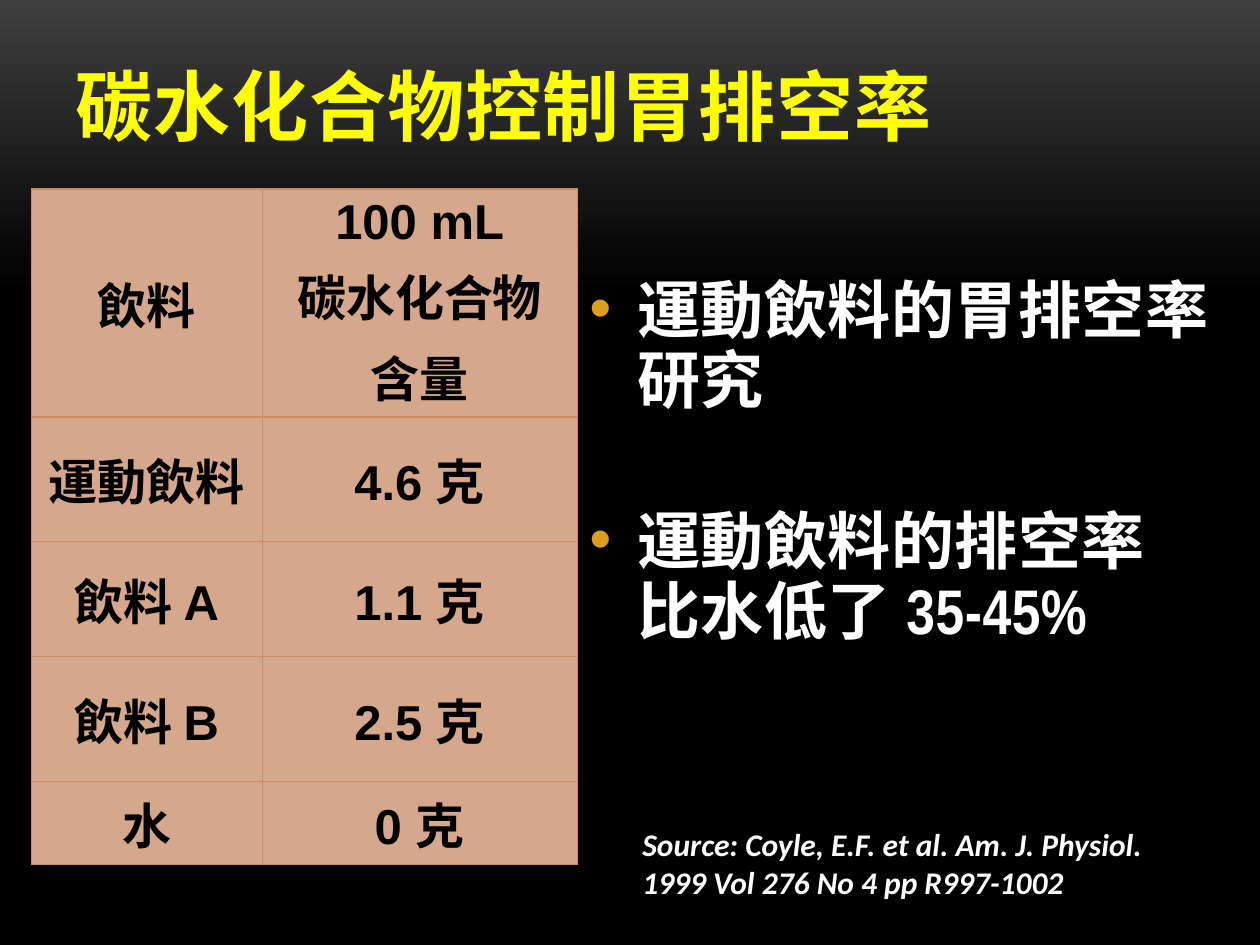
from lxml.etree import SubElement
from pptx import Presentation
from pptx.dml.color import RGBColor
from pptx.enum.text import MSO_ANCHOR, MSO_AUTO_SIZE, PP_ALIGN
from pptx.oxml.ns import qn
from pptx.util import Inches, Pt

YELLOW, WHITE, BLACK = "FFFF00", "FFFFFF", "000000"
BULLET, CELL_FILL, CELL_BORDER = "DC9E1F", "D5A78C", "CC8E60"

DRINKS = [
    ("飲料", "100 mL\n碳水化合物\n含量"),
    ("運動飲料", "4.6 克"),
    ("飲料 A", "1.1 克"),
    ("飲料 B", "2.5 克"),
    ("水", "0 克"),
]
COLUMN_WIDTHS = [1.83, 2.5]
ROW_HEIGHTS = [1.81, 0.99, 0.91, 0.99, 0.66]


def color(value):
    return RGBColor.from_string(value)


def write_text(paragraph, text, size, font="Arial Narrow", fill=WHITE,
               italic=False, spacing=0, align=PP_ALIGN.LEFT):
    """Fill a paragraph with bold text; a vertical tab makes a line break."""
    paragraph.text = text
    paragraph.alignment = align
    for run in paragraph.runs:
        run.font.name = font
        run.font.size = Pt(size)
        run.font.bold = True
        run.font.italic = italic
        run.font.color.rgb = color(fill)
        if spacing:
            run.font._element.set("spc", str(round(spacing * 100)))


def add_text_frame(slide, left, top, width, height):
    box = slide.shapes.add_textbox(Inches(left), Inches(top), Inches(width), Inches(height))
    box.text_frame.word_wrap = True
    return box.text_frame


def paint_background(slide):
    fill = slide.background.fill
    fill.gradient()
    fill.gradient_angle = 270
    for stop, position, value in zip(fill.gradient_stops, (0, 0.31), ("3F3F3F", BLACK)):
        stop.position = position
        stop.color.rgb = color(value)


def place_title(slide, left, top, width, height):
    title = slide.shapes.title
    title.left, title.top = Inches(left), Inches(top)
    title.width, title.height = Inches(width), Inches(height)
    frame = title.text_frame
    frame.auto_size = MSO_AUTO_SIZE.NONE
    frame.vertical_anchor = MSO_ANCHOR.BOTTOM
    write_text(frame.paragraphs[0], "碳水化合物控制胃排空率", 44, fill=YELLOW, spacing=0.5)


def add_borders(cell):
    properties = cell._tc.get_or_add_tcPr()
    for index, side in enumerate(("lnL", "lnR", "lnT", "lnB")):
        line = properties.makeelement(qn(f"a:{side}"), w=str(Pt(0.75)))
        solid = SubElement(line, qn("a:solidFill"))
        SubElement(solid, qn("a:srgbClr"), val=CELL_BORDER)
        properties.insert(index, line)


def fill_cell(cell, text):
    cell.fill.solid()
    cell.fill.fore_color.rgb = color(CELL_FILL)
    cell.vertical_anchor = MSO_ANCHOR.MIDDLE
    add_borders(cell)
    frame = cell.text_frame
    for index, line in enumerate(text.split("\n")):
        paragraph = frame.add_paragraph() if index else frame.paragraphs[0]
        write_text(paragraph, line, 28, font="Arial", fill=BLACK, align=PP_ALIGN.CENTER)
        if index:
            paragraph.space_before = Pt(5.6)


def add_drinks_table(slide, left, top):
    table = slide.shapes.add_table(
        len(DRINKS), len(COLUMN_WIDTHS), Inches(left), Inches(top),
        Inches(sum(COLUMN_WIDTHS)), Inches(sum(ROW_HEIGHTS))).table
    for column, width in zip(table.columns, COLUMN_WIDTHS):
        column.width = Inches(width)
    for row, height, texts in zip(table.rows, ROW_HEIGHTS, DRINKS):
        row.height = Inches(height)
        for cell, text in zip(row.cells, texts):
            fill_cell(cell, text)


def add_bullet(paragraph):
    properties = paragraph._p.get_or_add_pPr()
    properties.set("marL", str(Inches(0.38)))
    properties.set("indent", str(-Inches(0.38)))
    bullet_color = SubElement(properties, qn("a:buClr"))
    SubElement(bullet_color, qn("a:srgbClr"), val=BULLET)
    SubElement(properties, qn("a:buFont"), typeface="Arial")
    SubElement(properties, qn("a:buChar"), char="•")


def add_findings(slide, left, top, width, height):
    frame = add_text_frame(slide, left, top, width, height)
    findings = ["運動飲料的胃排空率研究", "運動飲料的排空率\v比水低了 35-45%"]
    for index, finding in enumerate(findings):
        paragraph = frame.add_paragraph() if index else frame.paragraphs[0]
        add_bullet(paragraph)
        write_text(paragraph, finding, 36, spacing=0.3)
        paragraph.line_spacing = Pt(40)
        paragraph.space_after = Pt(6)
        if index:
            paragraph.space_before = Pt(46)


def add_source(slide, left, top, width, height):
    frame = add_text_frame(slide, left, top, width, height)
    citation = "Source: Coyle, E.F. et al. Am. J. Physiol. 1999 Vol 276 No 4 pp R997-1002"
    write_text(frame.paragraphs[0], citation, 18, font="Calibri", italic=True)


def main():
    presentation = Presentation()
    presentation.slide_width, presentation.slide_height = Inches(10), Inches(7.5)
    slide = presentation.slides.add_slide(presentation.slide_layouts[5])
    paint_background(slide)
    place_title(slide, 0.5, 0, 9, 1.25)
    add_findings(slide, 4.58, 2.14, 5.42, 4.31)
    add_drinks_table(slide, 0.25, 1.5)
    add_source(slide, 5, 6.5, 4.5, 0.71)
    presentation.save("out.pptx")


if __name__ == "__main__":
    main()
